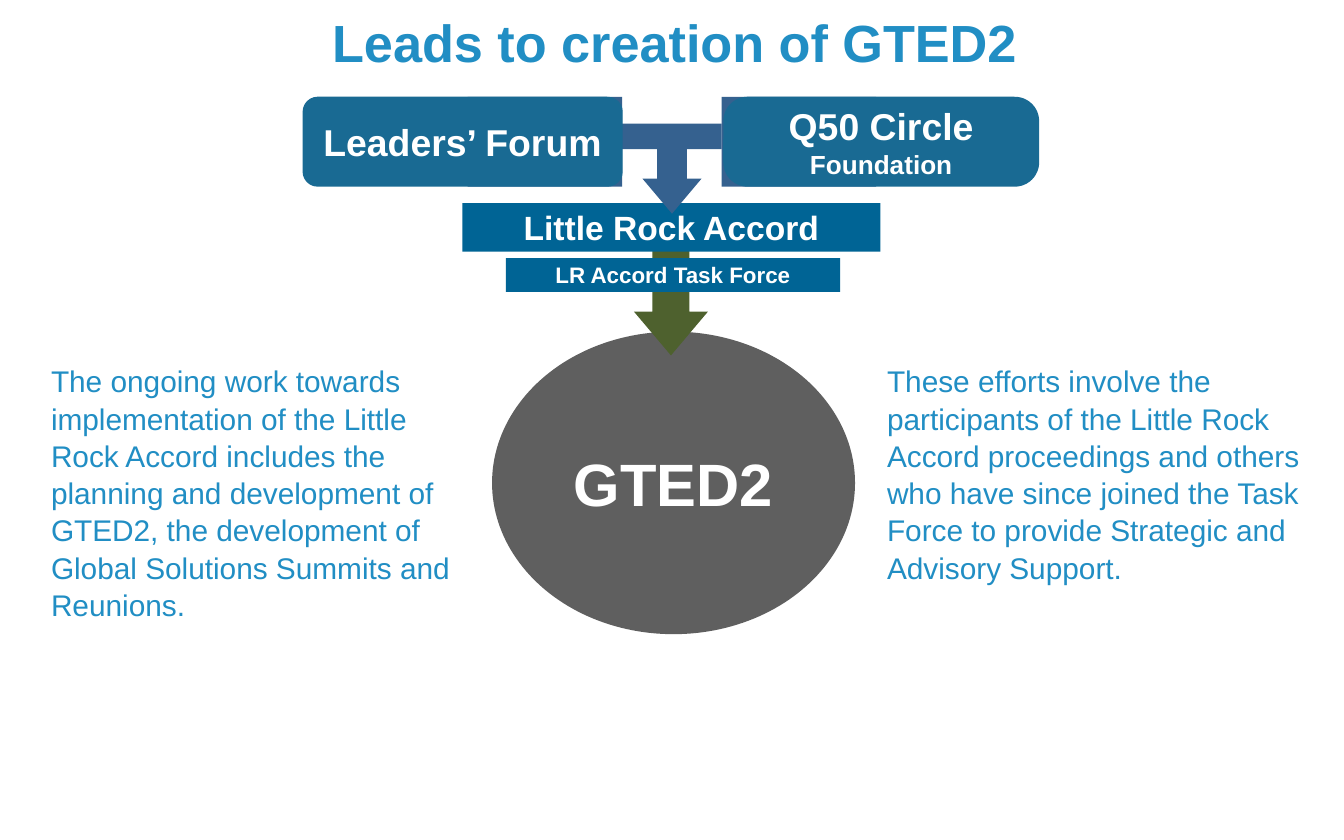
from lxml.etree import SubElement
from pptx import Presentation
from pptx.dml.color import RGBColor
from pptx.enum.shapes import MSO_SHAPE
from pptx.enum.text import MSO_ANCHOR, MSO_AUTO_SIZE, PP_ALIGN
from pptx.oxml.ns import qn
from pptx.util import Cm, Pt

COLORS = {
    "text": "218EC4",
    "white": "FFFFFF",
    "partner": "196A93",
    "link": "35618F",
    "accord": "006495",
    "task_arrow": "4E612E",
    "circle": "5F5F5F",
}
FONT = "Arial"
PARTNER_TOP, PARTNER_HEIGHT = 1.83, 1.7


def add_run(paragraph, text, size, color="white", bold=True):
    run = paragraph.add_run()
    run.text = text
    run.font.name = FONT
    run.font.size = Pt(size)
    run.font.bold = bold
    run.font.color.rgb = RGBColor.from_string(COLORS[color])


def add_block(slide, kind, box, color, runs=(), adjustments=(), side_inset=0.25):
    """Add a filled shape; runs holds (text, size) pairs for its centred label."""
    shape = slide.shapes.add_shape(kind, *map(Cm, box))
    shape.shadow.inherit = False
    shape.fill.solid()
    shape.fill.fore_color.rgb = RGBColor.from_string(COLORS[color])
    shape.line.fill.background()
    for index, value in enumerate(adjustments):
        shape.adjustments[index] = value
    frame = shape.text_frame
    frame.word_wrap = True
    frame.vertical_anchor = MSO_ANCHOR.MIDDLE
    frame.margin_left = frame.margin_right = Cm(side_inset)
    paragraph = frame.paragraphs[0]
    paragraph.alignment = PP_ALIGN.CENTER
    for text, size in runs:
        add_run(paragraph, text, size)
    return shape


def add_down_arrow(slide, box, color):
    arrow = add_block(slide, MSO_SHAPE.RIGHT_ARROW, box, color, adjustments=(0.5, 0.592))
    arrow.rotation = 90


def place(placeholder, box):
    placeholder.left, placeholder.top, placeholder.width, placeholder.height = map(Cm, box)
    placeholder.text_frame.auto_size = MSO_AUTO_SIZE.NONE
    return placeholder.text_frame


def fill_title(placeholder, text):
    frame = place(placeholder, (0.36, 0.05, 24.77, 1.47))
    frame.vertical_anchor = MSO_ANCHOR.MIDDLE
    paragraph = frame.paragraphs[0]
    paragraph.alignment = PP_ALIGN.CENTER
    add_run(paragraph, text, 28, color="text")


def fill_body(placeholder, left, text):
    frame = place(placeholder, (left, 6.71, 8.61, 8.64))
    paragraph = frame.paragraphs[0]
    paragraph.space_before = Pt(0)
    paragraph.line_spacing = 1.04
    # Plain text: no bullet and no hanging indent
    properties = paragraph._p.get_or_add_pPr()
    properties.set("marL", "0")
    properties.set("indent", "0")
    SubElement(properties, qn("a:buNone"))
    add_run(paragraph, text, 16, color="text", bold=False)


def main():
    presentation = Presentation()
    presentation.slide_width, presentation.slide_height = Cm(25.4), Cm(15.88)
    slide = presentation.slides.add_slide(presentation.slide_layouts[3])
    title, left_body, right_body = slide.placeholders

    # Title and side texts
    fill_title(title, "Leads to creation of GTED2")
    fill_body(left_body, 0.71,
              "The ongoing work towards implementation of the Little Rock Accord "
              "includes the planning and development of GTED2, the development of "
              "Global Solutions Summits and Reunions.")
    fill_body(right_body, 16.51,
              "These efforts involve the participants of the Little Rock Accord "
              "proceedings and others who have since joined the Task Force to "
              "provide Strategic and Advisory Support.")

    # Resulting group
    add_block(slide, MSO_SHAPE.OVAL, (9.3, 6.27, 6.86, 5.72), "circle",
              [("GTED2", 32)], side_inset=0)

    # Link between the two partners
    add_block(slide, MSO_SHAPE.RECTANGLE, (11.76, 2.34, 1.88, 0.48), "link")
    for left in (8.84, 13.64):
        add_block(slide, MSO_SHAPE.RECTANGLE,
                  (left, PARTNER_TOP, 2.92, PARTNER_HEIGHT), "link")

    # Partners
    partners = [
        (5.72, 6.05, 0.167, [("Leaders’ Forum", 20)]),
        (13.67, 5.97, 0.271, [("Q50 Circle ", 20), ("Foundation", 14)]),
    ]
    for left, width, rounding, runs in partners:
        add_block(slide, MSO_SHAPE.ROUNDED_RECTANGLE,
                  (left, PARTNER_TOP, width, PARTNER_HEIGHT), "partner", runs, (rounding,))

    # Accord, task force and the arrows through them
    add_down_arrow(slide, (11.46, 4.8, 2.44, 1.4), "task_arrow")
    add_block(slide, MSO_SHAPE.RECTANGLE, (8.74, 3.84, 7.9, 0.92), "accord",
              [("Little Rock Accord", 18)])
    add_block(slide, MSO_SHAPE.RECTANGLE, (9.56, 4.88, 6.32, 0.64), "accord",
              [("LR Accord Task Force", 12)])
    add_down_arrow(slide, (12.09, 2.87, 1.22, 1.12), "link")

    presentation.save("out.pptx")


if __name__ == "__main__":
    main()
